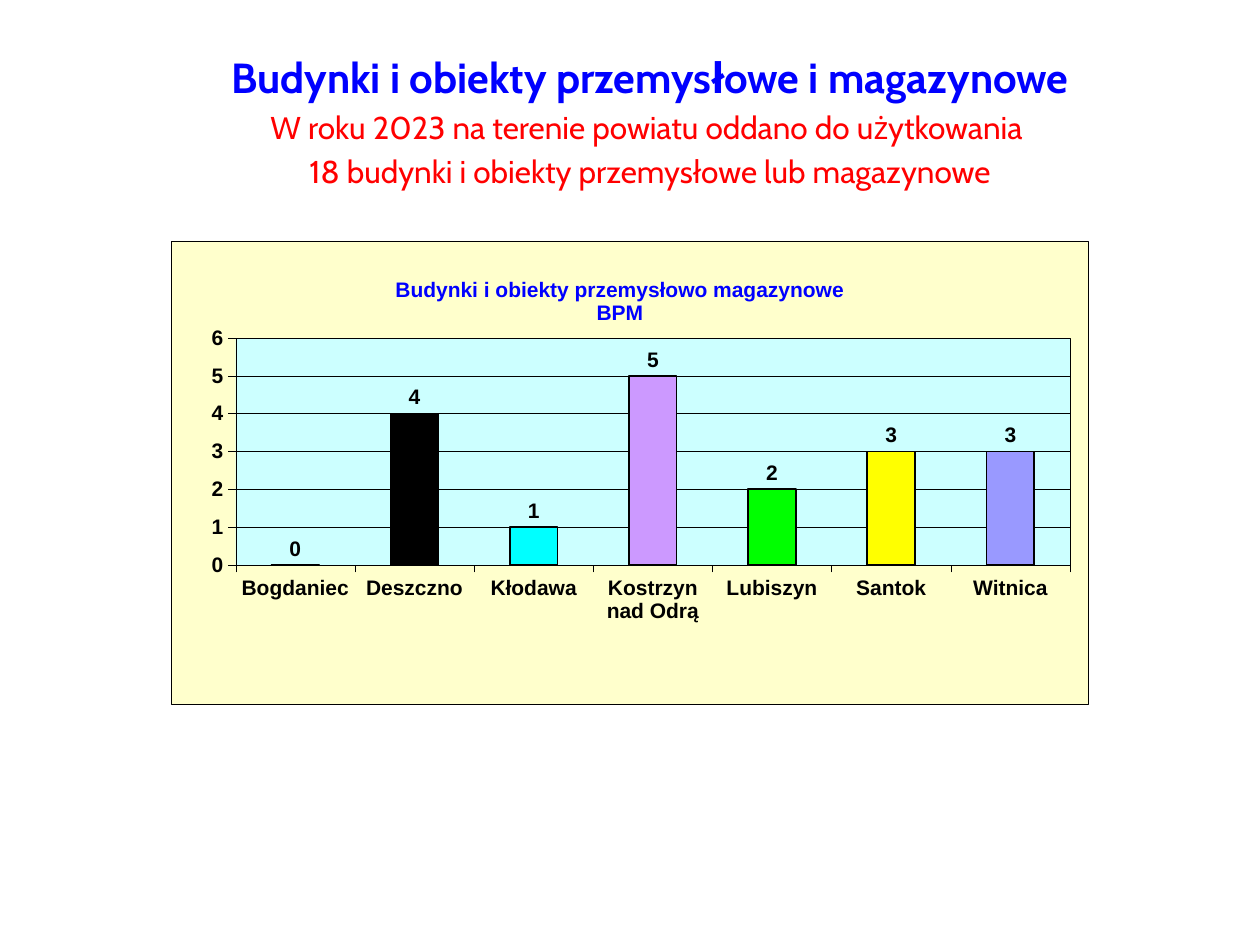
from dataclasses import dataclass

from lxml import etree
from pptx import Presentation
from pptx import util as u
from pptx.chart.data import CategoryChartData
from pptx.dml.color import RGBColor
from pptx.enum import chart as ch
from pptx.enum import text
from pptx.oxml import parse_xml
from pptx.oxml.ns import nsdecls, qn

COLORS = {
    "black": "000000", "blue": "0000FF", "red": "FF0000", "cream": "FFFFCC",
    "ice": "CCFFFF", "cyan": "00FFFF", "violet": "CC99FF", "green": "00FF00",
    "yellow": "FFFF00", "lavender": "9999FF",
}


@dataclass
class Bar:
    name: str
    value: int
    color: str


@dataclass
class Heading:
    text: str
    size: int
    color: str
    bold: bool


BARS = [
    Bar("Bogdaniec", 0, "red"),
    Bar("Deszczno", 4, "black"),
    Bar("Kłodawa", 1, "cyan"),
    Bar("Kostrzyn nad Odrą", 5, "violet"),
    Bar("Lubiszyn", 2, "green"),
    Bar("Santok", 3, "yellow"),
    Bar("Witnica", 3, "lavender"),
]
HEADINGS = [
    Heading("Budynki i obiekty przemysłowe i magazynowe", 24, "blue", True),
    Heading("W roku 2023 na terenie powiatu oddano do użytkowania ", 18, "red", False),
    Heading("18 budynki i obiekty przemysłowe lub magazynowe", 18, "red", False),
]


def rgb(name: str) -> RGBColor:
    return RGBColor.from_string(COLORS[name])


def set_font(font, size: float, color: str = "black", bold: bool = True, name: str = "Arial") -> None:
    font.size = u.Pt(size)
    font.bold = bold
    font.name = name
    font.color.rgb = rgb(color)


def add_text(tf, content: str, first: bool = False, space: float = 0, **fmt) -> None:
    p = tf.paragraphs[0] if first else tf.add_paragraph()
    p.alignment = text.PP_ALIGN.CENTER
    p.line_spacing = 1.0
    p.space_before = u.Pt(space)
    r = p.add_run()
    r.text = content
    set_font(r.font, **fmt)


def set_line(line, width: float) -> None:
    line.color.rgb = rgb("black")
    line.width = u.Pt(width)


def area_format(fill: str):
    return parse_xml(
        f'<c:spPr {nsdecls("c", "a")}>'
        f'<a:solidFill><a:srgbClr val="{COLORS[fill]}"/></a:solidFill>'
        f'<a:ln w="{u.Pt(0.25)}"><a:solidFill><a:srgbClr val="{COLORS["black"]}"/>'
        '</a:solidFill></a:ln></c:spPr>'
    )


def set_layout(parent, index: int, **settings) -> None:
    for old in parent.findall(qn("c:layout")):
        parent.remove(old)
    layout = etree.Element(qn("c:layout"))
    manual = etree.SubElement(layout, qn("c:manualLayout"))
    for tag, value in settings.items():
        etree.SubElement(manual, qn(f"c:{tag}")).set("val", str(value))
    parent.insert(index, layout)


def add_headings(s) -> None:
    sp = s.shapes.title
    sp.left, sp.top, sp.width, sp.height = map(u.Inches, (0.67, 0.36, 8.98, 1.34))
    tf = sp.text_frame
    tf.word_wrap = True
    tf.auto_size = text.MSO_AUTO_SIZE.NONE
    tf.vertical_anchor = text.MSO_ANCHOR.TOP
    for i, h in enumerate(HEADINGS):
        add_text(tf, h.text, first=i == 0, space=h.size * 0.2,
                 size=h.size, color=h.color, bold=h.bold, name="Cabin")


def add_bar_chart(s) -> None:
    data = CategoryChartData()
    data.categories = [b.name for b in BARS]
    data.add_series("Series 1", [b.value for b in BARS])
    frame = s.shapes.add_chart(ch.XL_CHART_TYPE.COLUMN_CLUSTERED,
                               *map(u.Inches, (1.36, 1.91, 7.28, 3.68)), data)
    chart = frame.chart
    set_font(chart.font, 10, bold=False)
    chart.has_legend = False

    chart.has_title = True
    tf = chart.chart_title.text_frame
    for i, line in enumerate(["Budynki i obiekty przemysłowo magazynowe", "BPM"]):
        add_text(tf, line, first=i == 0, size=12, color="blue")
    chart.chart_title.include_in_layout = False
    set_layout(chart.chart_title._element, 1, xMode="edge", yMode="edge", x=0.24, y=0.07)

    for axis in (chart.category_axis, chart.value_axis):
        set_font(axis.tick_labels.font, 12)
        set_line(axis.format.line, 0.25)
        axis.major_tick_mark = ch.XL_TICK_MARK.OUTSIDE
        axis.minor_tick_mark = ch.XL_TICK_MARK.NONE
    value_axis = chart.value_axis
    value_axis.minimum_scale, value_axis.maximum_scale, value_axis.major_unit = 0, 6, 1
    value_axis.has_major_gridlines = True
    set_line(value_axis.major_gridlines.format.line, 0.25)

    plot = chart.plots[0]
    plot.gap_width = 150
    plot.vary_by_categories = False
    series = plot.series[0]
    series.format.fill.solid()
    series.format.fill.fore_color.rgb = rgb("ice")
    set_line(series.format.line, 1)
    for i, bar in enumerate(BARS):
        fmt = series.points[i].format
        fmt.fill.solid()
        fmt.fill.fore_color.rgb = rgb(bar.color)
        set_line(fmt.line, 1)
    labels = series.data_labels
    labels.show_value = True
    labels.position = ch.XL_LABEL_POSITION.OUTSIDE_END
    set_font(labels.font, 12)

    chart_xml = chart._chartSpace.find(qn("c:chart"))
    chart_xml.addnext(area_format("cream"))
    plot_area = chart_xml.find(qn("c:plotArea"))
    plot_area.append(area_format("ice"))
    set_layout(plot_area, 0, layoutTarget="inner", xMode="edge", yMode="edge",
               x=0.07, y=0.21, w=0.91, h=0.49)


def main() -> None:
    prs = Presentation()
    prs.slide_width, prs.slide_height = u.Inches(10), u.Inches(7.5)
    s = prs.slides.add_slide(prs.slide_layouts[5])
    add_headings(s)
    add_bar_chart(s)
    prs.save("out.pptx")


if __name__ == "__main__":
    main()
